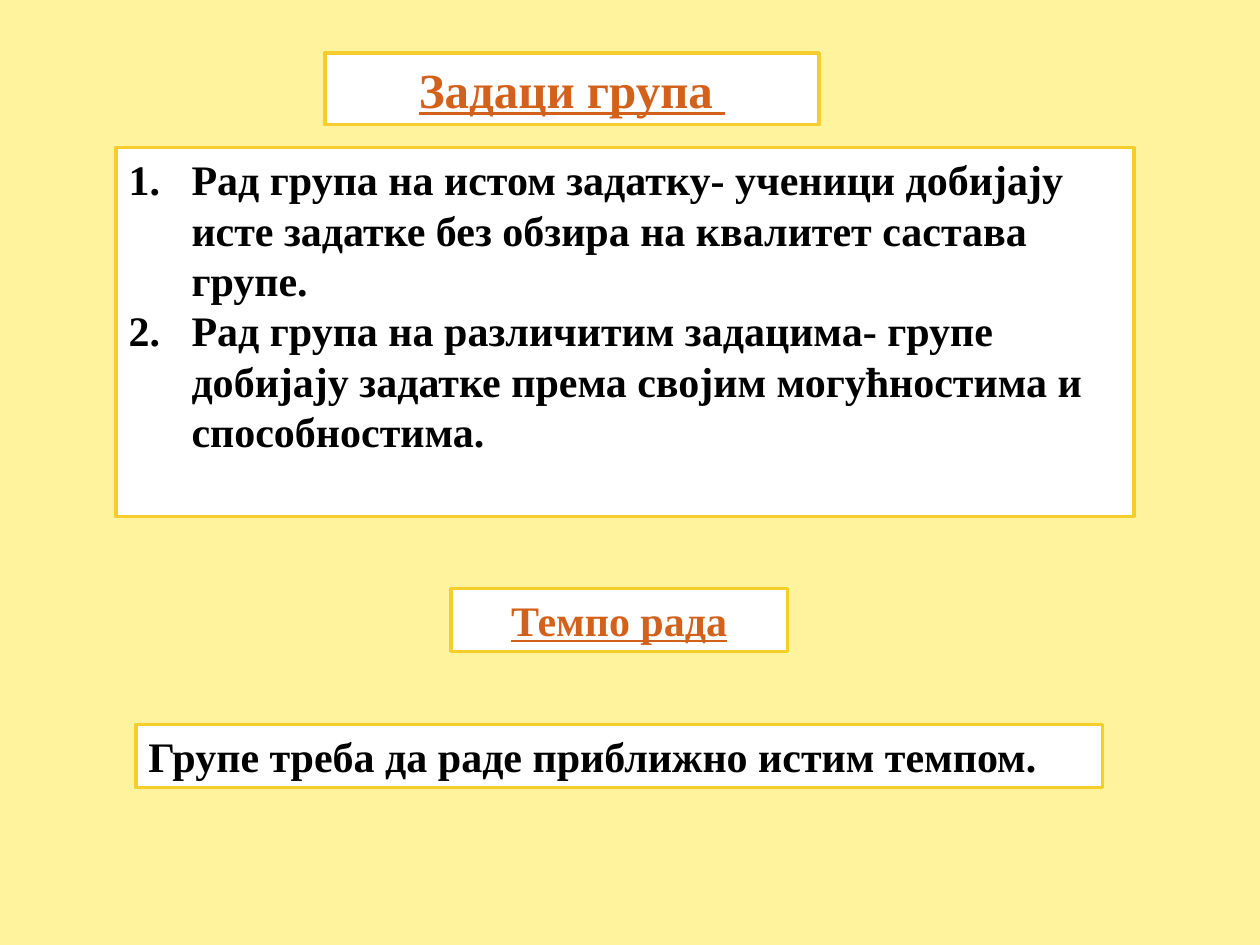
from lxml import etree
from pptx import Presentation
from pptx import util as u
from pptx.dml.color import RGBColor
from pptx.enum import shapes, text
from pptx.oxml import ns

CREAM = RGBColor(0xFF, 0xF3, 0x9D)
WHITE = RGBColor(0xFF, 0xFF, 0xFF)
GOLD = RGBColor(0xF5, 0xCD, 0x2D)
ORANGE = RGBColor(0xD2, 0x61, 0x1C)
BLACK = RGBColor(0, 0, 0)

HEADING = {"bold": True, "underline": True}
BODY = {"bold": True}


class SlideBuilder:
    """Holds the style and the current slide, and adds framed text to it."""

    font_name = "Times New Roman"
    indent = u.Inches(0.5)

    def __init__(self, presentation):
        self.slide = presentation.slides.add_slide(presentation.slide_layouts[1])
        background = self.slide.background.fill
        background.solid()
        background.fore_color.rgb = CREAM

    def frame(self, shape, box, lines, size, color, font_format, alignment):
        shape.left, shape.top, shape.width, shape.height = map(u.Inches, box)
        shape.fill.solid()
        shape.fill.fore_color.rgb = WHITE
        shape.line.color.rgb = GOLD
        shape.line.width = u.Pt(2)
        frame = shape.text_frame
        frame.word_wrap = True
        frame.auto_size = text.MSO_AUTO_SIZE.NONE
        frame.vertical_anchor = text.MSO_ANCHOR.TOP
        frame.text = "\n".join(lines)
        values = {"name": self.font_name, "size": u.Pt(size), **font_format}
        for paragraph in frame.paragraphs:
            paragraph.alignment = alignment
            paragraph.space_before = u.Pt(0)
            font = paragraph.runs[0].font
            for name, value in values.items():
                setattr(font, name, value)
            font.color.rgb = color

    def title(self, box, line, size):
        self.frame(self.slide.shapes.title, box, [line], size, ORANGE, HEADING,
                   text.PP_ALIGN.CENTER)

    def numbered_list(self, box, lines, size):
        shape = self.slide.placeholders[1]
        self.frame(shape, box, lines, size, BLACK, BODY, text.PP_ALIGN.LEFT)
        for paragraph in shape.text_frame.paragraphs:
            properties = paragraph._p.get_or_add_pPr()
            properties.set("marL", str(self.indent))
            properties.set("indent", str(-self.indent))
            bullet_font = etree.SubElement(properties, ns.qn("a:buFont"))
            bullet_font.set("typeface", "+mj-lt")
            number = etree.SubElement(properties, ns.qn("a:buAutoNum"))
            number.set("type", "arabicPeriod")

    def rectangle(self, box, line, size, color, font_format, alignment):
        shape = self.slide.shapes.add_shape(
            shapes.MSO_SHAPE.RECTANGLE, *map(u.Inches, box))
        shape.shadow.inherit = False
        self.frame(shape, box, [line], size, color, font_format, alignment)

    def subheading(self, box, line, size):
        self.rectangle(box, line, size, ORANGE, HEADING, text.PP_ALIGN.CENTER)

    def statement(self, box, line, size):
        self.rectangle(box, line, size, BLACK, BODY, text.PP_ALIGN.LEFT)


def main():
    presentation = Presentation()
    presentation.slide_width = u.Inches(10)
    presentation.slide_height = u.Inches(7.5)
    builder = SlideBuilder(presentation)
    builder.title((2.58, 0.42, 3.92, 0.57), "Задаци група ", 28)
    builder.numbered_list((0.92, 1.17, 8.08, 2.93), [
        "Рад група на истом задатку- ученици добијају исте задатке "
        "без обзира на квалитет састава групе.",
        "Рад група на различитим задацима- групе добијају задатке "
        "према својим могућностима и способностима.",
    ], 24)
    builder.subheading((3.58, 4.67, 2.67, 0.5), "Темпо рада", 24)
    builder.statement((1.08, 5.75, 7.67, 0.5),
                      "Групе треба да раде приближно истим темпом.", 24)
    presentation.save("out.pptx")


if __name__ == "__main__":
    main()
